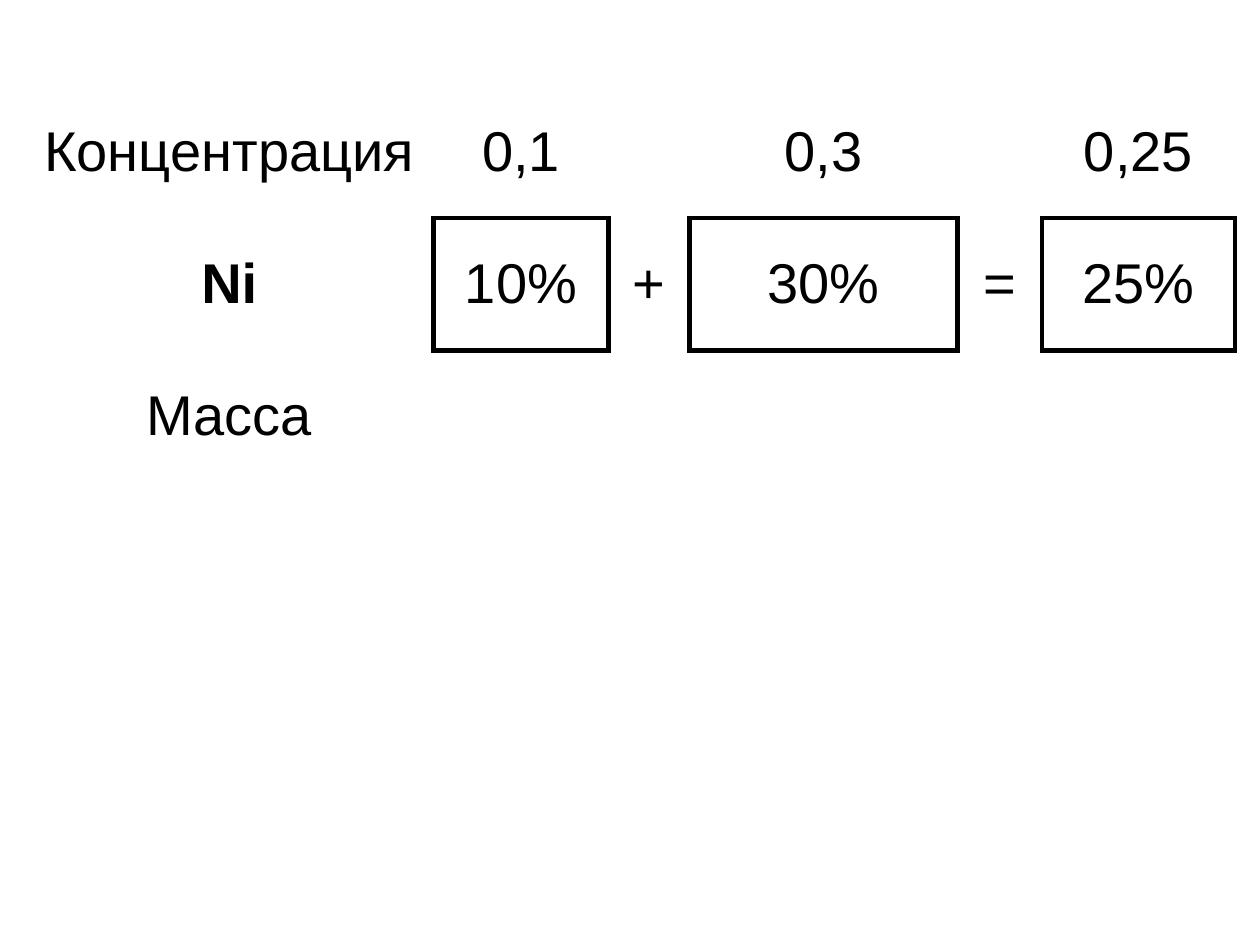
"""Build the nickel alloy mixing slide."""
from dataclasses import dataclass

import pptx
import pptx.dml.color
import pptx.enum.text
import pptx.oxml
import pptx.oxml.ns
import pptx.slide
import pptx.util

Pt = pptx.util.Pt

ROWS = [
    ["Концентрация", "0,1", "", "0,3", "", "0,25"],
    ["Ni", "10%", "+", "30%", "=", "25%"],
    ["Масса", "", "", "", "", ""],
]
COLUMN_WIDTHS = [233.3, 100.1, 46.1, 153.4, 48.2, 110.2]
ROW_HEIGHT = 75.6
ALLOY_CELLS = {(1, 1), (1, 3), (1, 5)}
EDGES = {"lnL": (0, -1), "lnR": (0, 1), "lnT": (-1, 0), "lnB": (1, 0)}


@dataclass
class Theme:
    """Colours, type and line sizes."""
    ink: str = "000000"
    paper: str = "FFFFFF"
    font: str = "Arial"
    size: float = 32
    border: float = 3


@dataclass
class MixtureSlide:
    """Draw styled elements on the current slide."""
    slide: pptx.slide.Slide
    theme: Theme

    def background(self):
        """Fill the slide with the paper colour."""
        fill = self.slide.background.fill
        fill.solid()
        fill.fore_color.rgb = pptx.dml.color.RGBColor.from_string(self.theme.paper)

    def text(self, cell, content, bold):
        """Write centred text in a table cell."""
        cell.vertical_anchor = pptx.enum.text.MSO_ANCHOR.MIDDLE
        paragraph = cell.text_frame.paragraphs[0]
        paragraph.alignment = pptx.enum.text.PP_ALIGN.CENTER
        if not content:
            return
        run = paragraph.add_run()
        run.text = content
        formats = {"name": self.theme.font, "size": Pt(self.theme.size), "bold": bold}
        for name, value in formats.items():
            setattr(run.font, name, value)
        run.font.color.rgb = pptx.dml.color.RGBColor.from_string(self.theme.ink)

    def borders(self, cell, drawn_edges):
        """Draw the given cell edges and clear the others."""
        properties = cell._tc.get_or_add_tcPr()
        namespace = pptx.oxml.ns.nsdecls("a")
        for index, edge in enumerate(EDGES):
            fill = "<a:noFill/>"
            if edge in drawn_edges:
                fill = f'<a:solidFill><a:srgbClr val="{self.theme.ink}"/></a:solidFill>'
            line = pptx.oxml.parse_xml(
                f'<a:{edge} {namespace} w="{Pt(self.theme.border)}">{fill}</a:{edge}>'
            )
            properties.insert(index, line)

    def table(self, left, top, rows, widths, row_height, boxed):
        """Add a table with borders around the boxed cells."""
        table = self.slide.shapes.add_table(
            len(rows), len(widths), Pt(left), Pt(top),
            Pt(sum(widths)), Pt(row_height * len(rows)),
        ).table
        for name in ("first_row", "horz_banding"):
            setattr(table, name, False)
        for column, width in zip(table.columns, widths):
            column.width = Pt(width)
        for row_index, contents in enumerate(rows):
            table.rows[row_index].height = Pt(row_height)
            for column_index, content in enumerate(contents):
                cell = table.cell(row_index, column_index)
                cell.fill.background()
                self.text(cell, content, bold=content == "Ni")
                drawn_edges = {
                    edge for edge, (down, right) in EDGES.items()
                    if {(row_index, column_index),
                        (row_index + down, column_index + right)} & boxed
                }
                self.borders(cell, drawn_edges)


def main():
    """Create and save the presentation."""
    presentation = pptx.Presentation()
    presentation.slide_width, presentation.slide_height = Pt(720), Pt(540)
    slide = presentation.slides.add_slide(presentation.slide_layouts[6])
    mixture = MixtureSlide(slide, Theme())
    mixture.background()
    mixture.table(14.4, 49, ROWS, COLUMN_WIDTHS, ROW_HEIGHT, ALLOY_CELLS)
    presentation.save("out.pptx")


if __name__ == "__main__":
    main()
